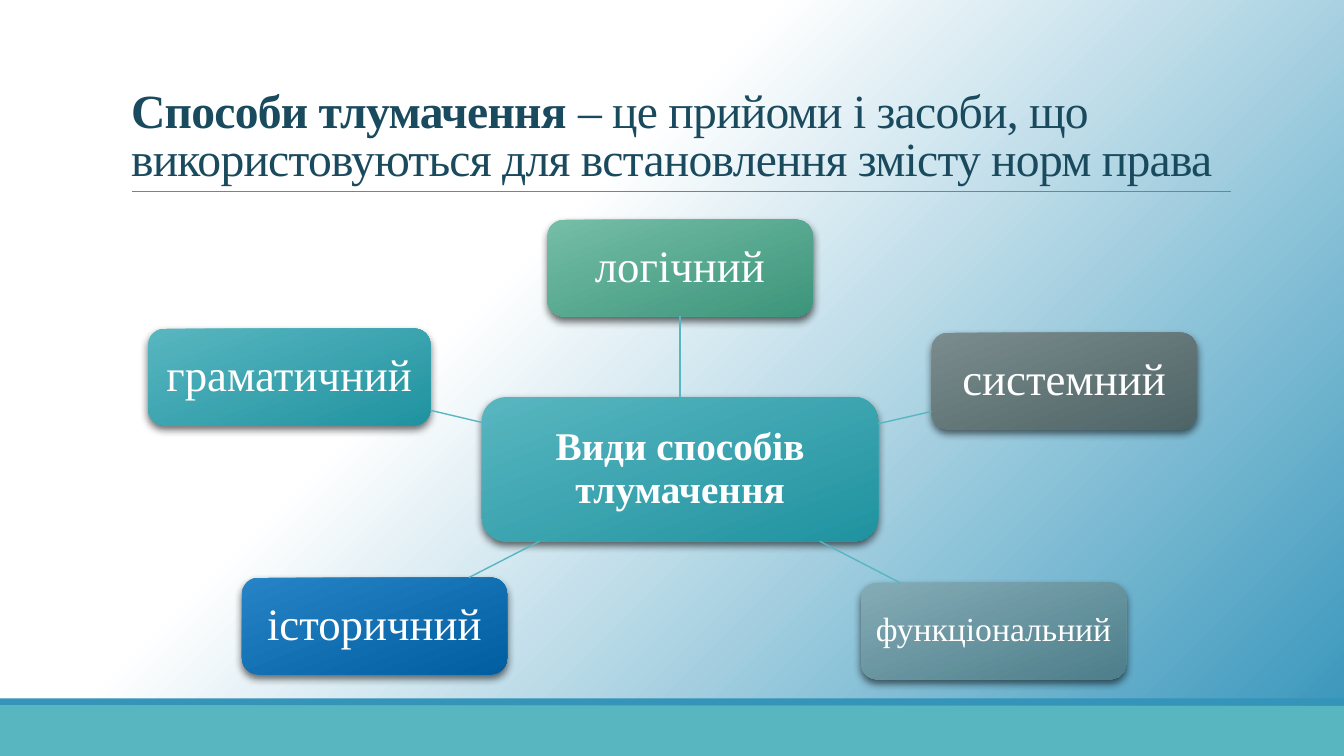
from lxml.etree import SubElement
from pptx import Presentation
from pptx.dml.color import RGBColor
from pptx.enum.shapes import MSO_CONNECTOR, MSO_SHAPE
from pptx.enum.text import MSO_ANCHOR, MSO_AUTO_SIZE, PP_ALIGN
from pptx.oxml.ns import qn
from pptx.util import Inches, Pt

color = RGBColor.from_string
TEAL = "58B6C0"
BLUE = "3494BA"


def write_text(shape, *runs, size, fill, align=PP_ALIGN.CENTER, anchor=MSO_ANCHOR.MIDDLE,
               line_spacing=0.9, margin=None, tracking=None):
    """Fill the shape with one paragraph; each run is a (text, bold) pair."""
    frame = shape.text_frame
    frame.word_wrap = True
    frame.auto_size = MSO_AUTO_SIZE.NONE
    frame.vertical_anchor = anchor
    if margin is not None:
        frame.margin_left = frame.margin_right = Inches(margin)
        frame.margin_top = frame.margin_bottom = Inches(margin)
    paragraph = frame.paragraphs[0]
    paragraph.alignment = align
    paragraph.line_spacing = line_spacing
    for text, bold in runs:
        run = paragraph.add_run()
        run.text = text
        run.font.name = "Times New Roman"
        run.font.size = Pt(size)
        run.font.bold = bold
        run.font.color.rgb = color(fill)
        if tracking is not None:
            run.font._element.set("spc", str(int(tracking * 100)))


def add_line(start, end, line_color, width):
    line = slide.shapes.add_connector(MSO_CONNECTOR.STRAIGHT, *map(Inches, start + end))
    line.line.color.rgb = color(line_color)
    line.line.width = Pt(width)
    SubElement(line._element.spPr, qn("a:effectLst"))
    return line


presentation = Presentation()
presentation.slide_width = Inches(13.33)
presentation.slide_height = Inches(7.5)
slide = presentation.slides.add_slide(presentation.slide_layouts[5])

# Background: white up to 37 %, then blue towards the lower right corner
background = slide.background.fill
background.gradient()
background.gradient_angle = 360 - 45
for stop, position, stop_color in zip(background.gradient_stops, (0.37, 1), ("FFFFFF", BLUE)):
    stop.position = position
    stop.color.rgb = color(stop_color)

# Footer bands and title rule
for top, height, band_color in ((7, 0.5, TEAL), (6.93, 0.07, BLUE)):
    band = slide.shapes.add_shape(
        MSO_SHAPE.RECTANGLE, 0, Inches(top), presentation.slide_width, Inches(height))
    band.fill.solid()
    band.fill.fore_color.rgb = color(band_color)
    band.line.fill.background()
    band.shadow.inherit = False
add_line((1.31, 1.9), (12.21, 1.9), "808080", 0.5)

title = slide.shapes.title
title.left, title.top, title.width, title.height = map(Inches, (1.2, 0.31, 11, 1.59))
write_text(
    title,
    ("Способи тлумачення ", True),
    ("– це прийоми і засоби, що використовуються для встановлення змісту норм права", False),
    size=34, fill="1A4A5D", align=PP_ALIGN.LEFT, anchor=MSO_ANCHOR.BOTTOM,
    line_spacing=0.85, tracking=-0.5)

# Diagram: the hub comes first, every later box is joined to it
# text, left, top, width, height, gradient start, gradient end, size, margin
boxes = [
    ("Види способів тлумачення", 4.78, 3.94, 3.93, 1.43, TEAL, "2093A0", 28, 0.08),
    ("логічний", 5.43, 2.18, 2.63, 0.96, "75BDA7", "3C957A", 32, 0.09),
    ("системний", 9.24, 3.3, 2.63, 0.96, "7A8C8E", "4E6466", 32, 0.09),
    ("функціональний", 8.54, 5.78, 2.63, 0.96, "84ACB6", "4D7E8A", 24, 0.07),
    ("історичний", 2.4, 5.73, 2.63, 0.96, "2683C6", "005EA1", 32, 0.09),
    ("граматичний", 1.47, 3.26, 2.8, 0.96, TEAL, "2093A0", 32, 0.09),
]
_, hub_left, hub_top, hub_width, hub_height, *_ = boxes[0]
hub_x, hub_y = hub_left + hub_width / 2, hub_top + hub_height / 2
hub = None

for text, left, top, width, height, light, dark, size, margin in boxes:
    box = slide.shapes.add_shape(
        MSO_SHAPE.ROUNDED_RECTANGLE, *map(Inches, (left, top, width, height)))
    box.fill.gradient()
    box.fill.gradient_angle = 360 - 69
    for stop, stop_color in zip(box.fill.gradient_stops, (light, dark)):
        stop.color.rgb = color(stop_color)
    box.line.fill.background()
    box.shadow.inherit = False
    shadow = SubElement(
        box._element.spPr.find(qn("a:effectLst")), qn("a:outerShdw"),
        blurRad=str(Pt(6)), dist=str(Pt(3)), dir=str(90 * 60000), rotWithShape="0")
    shadow_color = SubElement(shadow, qn("a:srgbClr"), val="000000")
    SubElement(shadow_color, qn("a:alpha"), val="60000")
    write_text(box, (text, hub is None), size=size, fill="FFFFFF", margin=margin)

    if hub is None:
        hub = box
        continue
    # The line runs from centre to centre, cut off at the edges of both boxes
    x, y = left + width / 2, top + height / 2
    dx, dy = x - hub_x, y - hub_y
    hub_cut = max(abs(dx) / hub_width, abs(dy) / hub_height) * 2
    box_cut = max(abs(dx) / width, abs(dy) / height) * 2
    line = add_line((hub_x + dx / hub_cut, hub_y + dy / hub_cut),
                    (x - dx / box_cut, y - dy / box_cut), TEAL, 1)
    if abs(dx) < 0.01:
        line.begin_connect(hub, 0)
        line.end_connect(box, 2)

presentation.save("out.pptx")
